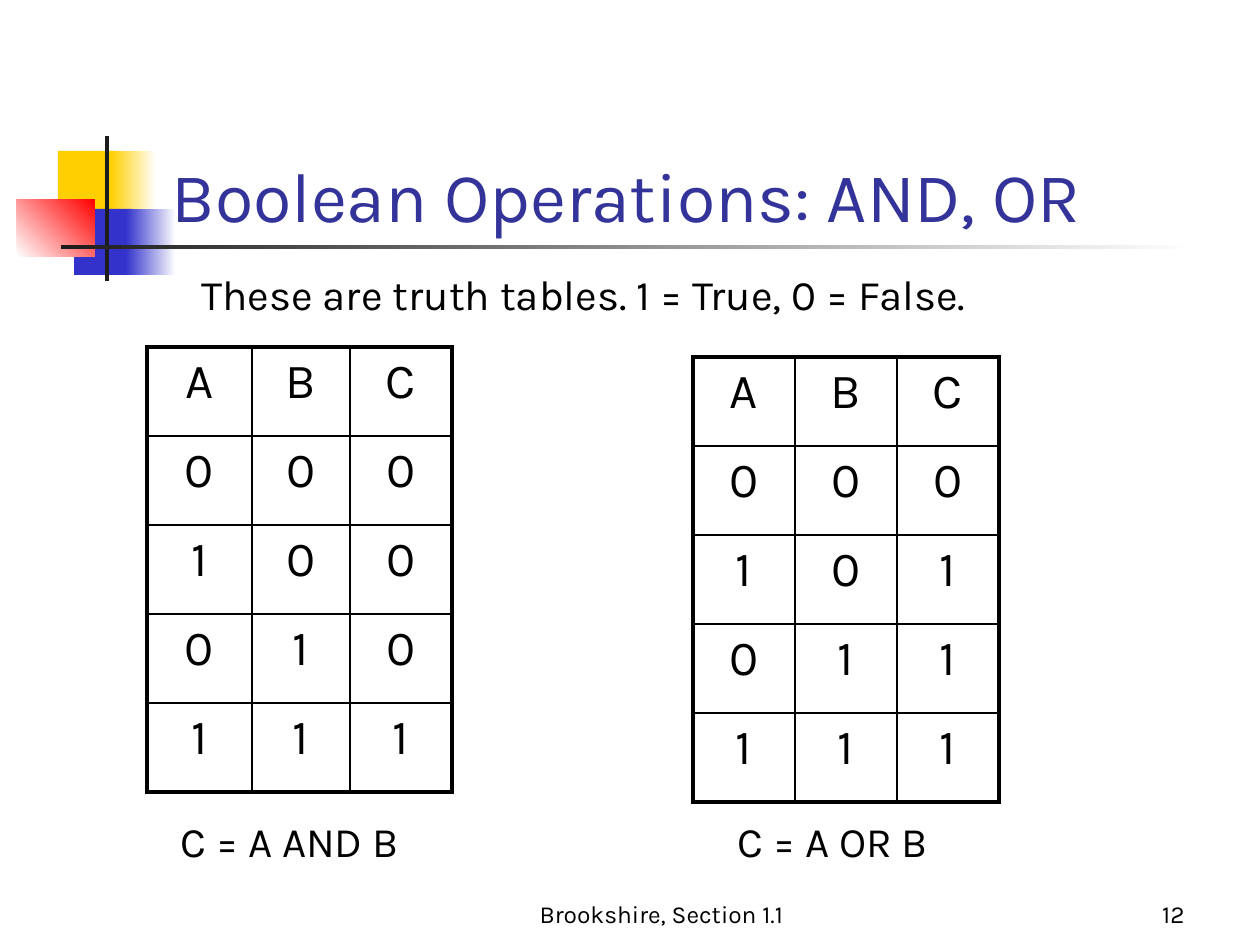
"""Build a slide with the truth tables of the Boolean operations AND and OR."""
from lxml.etree import SubElement
from pptx import Presentation
from pptx.dml.color import RGBColor
from pptx.enum.shapes import MSO_SHAPE as Shape
from pptx.enum.text import MSO_ANCHOR as Anchor, MSO_AUTO_SIZE as AutoSize, PP_ALIGN as Align
from pptx.oxml.ns import qn
from pptx.util import Emu, Pt

PX = 914400 / 126
FONT = "Karla"
BLACK, WHITE, YELLOW, BLUE, RED, DARK, NAVY = (
    "000000", "FFFFFF", "FFCF01", "3333CC", "FF0000", "1C1C1C", "333399")


def px(*lengths):
    return [Emu(round(length * PX)) for length in lengths]


def write(frame, text, size, color=BLACK, align=Align.LEFT):
    frame.text = text
    paragraph = frame.paragraphs[0]
    paragraph.alignment = align
    paragraph.font.name = FONT
    paragraph.font.size = Pt(size)
    paragraph.font.bold = False
    paragraph.font.color.rgb = RGBColor.from_string(color)


deck = Presentation()
deck.slide_width, deck.slide_height = px(1260, 945)
slide = deck.slides.add_slide(deck.slide_layouts[5])
shapes = slide.shapes

ornaments = [
    ((58, 151, 60, 66), [YELLOW], 0),
    ((111, 151, 45, 66), [YELLOW, WHITE], 0),
    ((74, 209, 58, 66), [BLUE], 0),
    ((126, 209, 50, 66), [BLUE, WHITE], 0),
    ((17, 199, 78, 58), [WHITE, RED], 45),
    ((105, 136, 4, 145), [DARK], 0),
    ((61, 245, 1134, 4), [DARK, WHITE], 0),
]
for place, colors, angle in ornaments:
    ornament = shapes.add_shape(Shape.RECTANGLE, *px(*place))
    ornament.shadow.inherit = False
    ornament.line.fill.background()
    if len(colors) == 1:
        ornament.fill.solid()
        ornament.fill.fore_color.rgb = RGBColor.from_string(colors[0])
    else:
        ornament.fill.gradient()
        ornament.fill.gradient_angle = angle
        for stop, color in zip(ornament.fill.gradient_stops, colors):
            stop.color.rgb = RGBColor.from_string(color)

title = shapes.title
shapes._spTree.append(title._element)
title.left, title.top, title.width, title.height = px(159, 86, 1074, 157)
title.text_frame.vertical_anchor = Anchor.BOTTOM
title.text_frame.auto_size = AutoSize.NONE
write(title.text_frame, "Boolean Operations: AND, OR", 40, NAVY)

truth_tables = [
    ((147, 347), (105, 98, 102), ["ABC", "000", "100", "010", "111"]),
    ((693, 357), (102, 102, 102), ["ABC", "000", "101", "011", "111"]),
]
ROW_HEIGHT = 89
for corner, widths, rows in truth_tables:
    last_row, last_column = len(rows) - 1, len(widths) - 1
    table = shapes.add_table(len(rows), len(widths), *px(
        *corner, sum(widths), ROW_HEIGHT * len(rows))).table
    table.first_row = table.horz_banding = False
    for column, width in zip(table.columns, px(*widths)):
        column.width = width
    for r, values in enumerate(rows):
        table.rows[r].height = px(ROW_HEIGHT)[0]
        for c, value in enumerate(values):
            cell = table.cell(r, c)
            write(cell.text_frame, value, 28, align=Align.CENTER)
            outer_edges = {"a:lnL": c == 0, "a:lnR": c == last_column,
                           "a:lnT": r == 0, "a:lnB": r == last_row}
            properties = cell._tc.get_or_add_tcPr()
            for edge, is_outer in outer_edges.items():
                border = SubElement(properties, qn(edge), w=str(Pt(2.25 if is_outer else 1)))
                SubElement(SubElement(border, qn("a:solidFill")), qn("a:srgbClr"), val=BLACK)
            cell.fill.background()

captions = [
    ((168, 809, 265, 63), "C = A AND B"),
    ((725, 809, 239, 63), "C = A OR B"),
    ((189, 262, 838, 63), "These are truth tables. 1 = True, 0 = False."),
]
for place, text in captions:
    caption = shapes.add_textbox(*px(*place)).text_frame
    caption.word_wrap = False
    caption.auto_size = AutoSize.SHAPE_TO_FIT_TEXT
    write(caption, text, 24)

footers = [
    ((462, 872, 399, 63), "Brookshire, Section 1.1", Align.CENTER),
    ((935, 872, 262, 63), "12", Align.RIGHT),
]
for place, text, align in footers:
    footer = shapes.add_textbox(*px(*place)).text_frame
    footer.word_wrap = True
    footer.vertical_anchor = Anchor.BOTTOM
    write(footer, text, 14, align=align)

deck.save("out.pptx")
